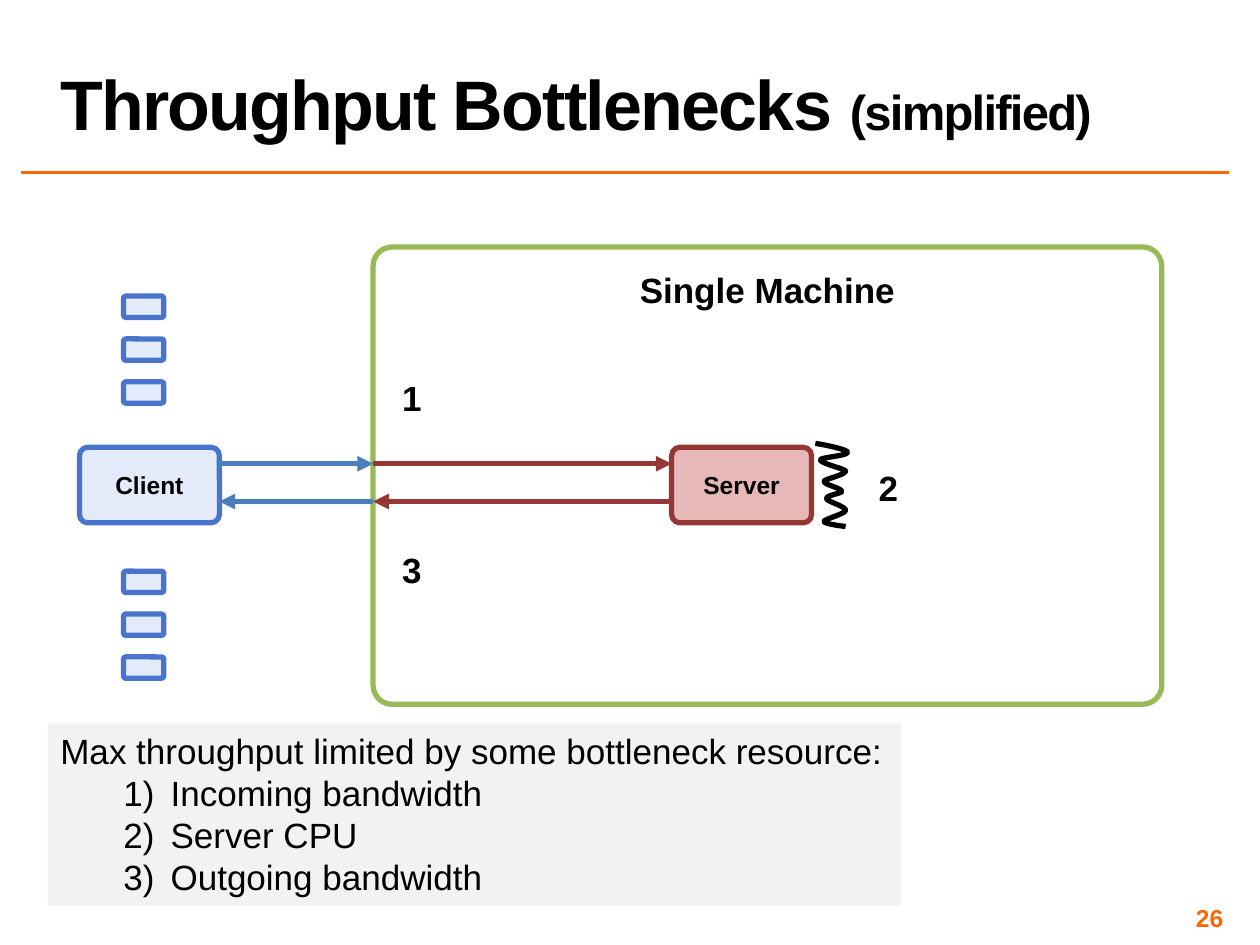
from dataclasses import dataclass

from lxml.etree import SubElement
from pptx import Presentation
from pptx.dml.color import RGBColor
from pptx.enum.shapes import MSO_CONNECTOR, MSO_SHAPE
from pptx.enum.text import MSO_ANCHOR, MSO_AUTO_SIZE, PP_ALIGN
from pptx.oxml.ns import qn
from pptx.util import Pt


@dataclass(frozen=True)
class Theme:
    font: str = "Arial"
    ink: str = "000000"
    accent: str = "FF6600"
    panel: str = "F2F2F2"
    client_fill: str = "E3EAF9"
    client_line: str = "4974CB"
    server_fill: str = "E6B9B8"
    server_line: str = "953735"
    machine_line: str = "98B955"
    network: str = "4B7EBC"
    title_size: float = 40
    subtitle_size: float = 28
    text_size: float = 20
    small_size: float = 14
    stroke: float = 3
    rule: float = 2


@dataclass(frozen=True)
class Box:
    left: float
    top: float
    width: float
    height: float

    @property
    def right(self):
        return self.left + self.width

    def inner(self, left, top, width, height):
        return Box(self.left + left, self.top + top, width, height)

    def lengths(self):
        return [Pt(v) for v in (self.left, self.top, self.width, self.height)]


THEME = Theme()


def color(code):
    return RGBColor.from_string(code)


def style_span(span, size, bold=True, ink=THEME.ink):
    span.font.name = THEME.font
    span.font.size = Pt(size)
    span.font.bold = bold
    span.font.color.rgb = color(ink)


def add_line(page, start, end, ink, width=THEME.stroke, arrow=False):
    line = page.shapes.add_connector(
        MSO_CONNECTOR.STRAIGHT, *[Pt(v) for v in (*start, *end)])
    line.line.color.rgb = color(ink)
    line.line.width = Pt(width)
    if arrow:
        SubElement(line.line._get_or_add_ln(), qn("a:tailEnd"), type="triangle")
    SubElement(line._element.spPr, qn("a:effectLst"))


def add_rounded(page, box, ink, fill=None, corner=0.111, label=None,
                size=THEME.small_size):
    shape = page.shapes.add_shape(MSO_SHAPE.ROUNDED_RECTANGLE, *box.lengths())
    shape.shadow.inherit = False
    shape.adjustments[0] = corner
    shape.line.color.rgb = color(ink)
    shape.line.width = Pt(THEME.stroke)
    if fill:
        shape.fill.solid()
        shape.fill.fore_color.rgb = color(fill)
    else:
        shape.fill.background()
    if label:
        para = shape.text_frame.paragraphs[0]
        para.text = label
        para.alignment = PP_ALIGN.CENTER
        style_span(para.runs[0], size)
    return shape


def add_label(page, box, text, size=THEME.text_size, ink=THEME.ink,
              align=PP_ALIGN.CENTER):
    frame = page.shapes.add_textbox(*box.lengths()).text_frame
    frame.word_wrap = True
    frame.text = text
    para = frame.paragraphs[0]
    para.alignment = align
    style_span(para.runs[0], size, ink=ink)
    return frame


def build_title(page, box):
    title = page.shapes.title
    title.left, title.top, title.width, title.height = box.lengths()
    frame = title.text_frame
    frame.auto_size = MSO_AUTO_SIZE.NONE
    frame.vertical_anchor = MSO_ANCHOR.BOTTOM
    para = frame.paragraphs[0]
    para.alignment = PP_ALIGN.LEFT
    para.line_spacing = 0.8
    parts = (("Throughput Bottlenecks ", THEME.title_size),
             ("(simplified)", THEME.subtitle_size))
    for text, size in parts:
        span = para.add_run()
        span.text = text
        style_span(span, size)
        span.font._element.set("spc", "-100")
    # Rule under the title
    rule_top = box.top + 97.2
    add_line(page, (12.2, rule_top), (702, rule_top), THEME.accent, THEME.rule)


def build_clients(page, box):
    """Draw the main client between two stacks of small ones."""
    add_rounded(page, box, THEME.client_line, THEME.client_fill, label="Client")
    for stack_top in (-86.4, 70.8):
        for row in range(3):
            small = box.inner(25.2, stack_top + 24.5 * row, 23, 12.2)
            add_rounded(page, small, THEME.client_line, THEME.client_fill)


def build_squiggle(page, box):
    """Draw the work done by the server, as sampled cubic curves."""
    curves = [
        ((8.6, 1.4), (18, 3.6), (18.4, 5)),
        ((18.7, 7.2), (2.9, 7.9), (2.9, 9.4)),
        ((2.9, 11.5), (16.6, 14.4), (17.3, 15.8)),
        ((17.3, 18), (5.8, 20.2), (5, 21.6)),
        ((5, 23.8), (14.4, 25.2), (15.1, 27.4)),
        ((15.1, 28.8), (5.8, 29.5), (6.5, 31.7)),
        ((6.5, 33.1), (17.3, 36), (17.3, 38.2)),
        ((17.3, 40.3), (5, 43.2), (5, 44.6)),
        ((5, 46.1), (17.3, 47.5), (17.3, 47.5)),
    ]
    steps = 10
    start = (0, 0)
    points = []
    for first, second, end in curves:
        for step in range(1, steps + 1):
            t = step / steps
            x, y = ((1 - t) ** 3 * a + 3 * (1 - t) ** 2 * t * b
                    + 3 * (1 - t) * t ** 2 * c + t ** 3 * d
                    for a, b, c, d in zip(start, first, second, end))
            points.append((Pt(box.left + x), Pt(box.top + y)))
        start = end
    builder = page.shapes.build_freeform(Pt(box.left), Pt(box.top))
    builder.add_line_segments(points, close=False)
    squiggle = builder.convert_to_shape()
    squiggle.shadow.inherit = False
    squiggle.fill.background()
    squiggle.line.color.rgb = color(THEME.ink)
    squiggle.line.width = Pt(THEME.stroke)


def build_machine(page, box, client):
    frame = add_rounded(page, box, THEME.machine_line, corner=0.042,
                        label="Single Machine", size=THEME.text_size).text_frame
    frame.vertical_anchor = MSO_ANCHOR.TOP
    frame.margin_top = Pt(9)
    server = box.inner(170.6, 114.5, client.width, client.height)
    add_rounded(page, server, THEME.server_line, THEME.server_fill, label="Server")
    # Requests run above, replies below
    request, reply = client.top + 9.4, client.top + 31
    for left, right, ink in ((client.right, box.left, THEME.network),
                             (box.left, server.left, THEME.server_line)):
        add_line(page, (left, request), (right, request), ink, arrow=True)
        add_line(page, (right, reply), (left, reply), ink, arrow=True)
    build_squiggle(page, server.inner(82.1, -2.2, 18.7, 48.2))
    # Bottleneck numbers
    for text, left, top in (("1", 9.2, 70.6), ("2", 281.5, 121.7), ("3", 9.2, 168.5)):
        add_label(page, box.inner(left, top, 26, 31.5), text)


def build_summary(page, box):
    panel = page.shapes.add_textbox(*box.lengths())
    panel.fill.solid()
    panel.fill.fore_color.rgb = color(THEME.panel)
    frame = panel.text_frame
    frame.word_wrap = False
    frame.text = "\n".join(("Max throughput limited by some bottleneck resource:",
                            "Incoming bandwidth", "Server CPU", "Outgoing bandwidth"))
    for index, para in enumerate(frame.paragraphs):
        style_span(para.runs[0], THEME.text_size, bold=False)
        if index:
            para.level = 1
            properties = para._p.get_or_add_pPr()
            properties.set("marL", str(Pt(63)))
            properties.set("indent", str(Pt(-27)))
            SubElement(properties, qn("a:buFont"), typeface=THEME.font)
            SubElement(properties, qn("a:buAutoNum"), type="arabicParenR")


def build_page_number(page, box):
    frame = add_label(page, box, "26", THEME.small_size, THEME.accent, PP_ALIGN.RIGHT)
    frame.vertical_anchor = MSO_ANCHOR.MIDDLE
    frame.margin_left = frame.margin_right = Pt(3)
    frame.margin_top = frame.margin_bottom = Pt(3)


def main():
    deck = Presentation()
    deck.slide_width, deck.slide_height = Pt(720), Pt(540)
    page = deck.slides.add_slide(deck.slide_layouts[5])
    client = Box(45.4, 255.6, 80, 43.2)
    build_title(page, Box(27.4, 1.4, 674.6, 84.2))
    build_clients(page, client)
    build_machine(page, Box(213.2, 141.1, 450.7, 261.4), client)
    build_summary(page, Box(27.4, 413.3, 487.4, 104.4))
    build_page_number(page, Box(534.2, 516.2, 167.8, 16.6))
    deck.save("out.pptx")


if __name__ == "__main__":
    main()
